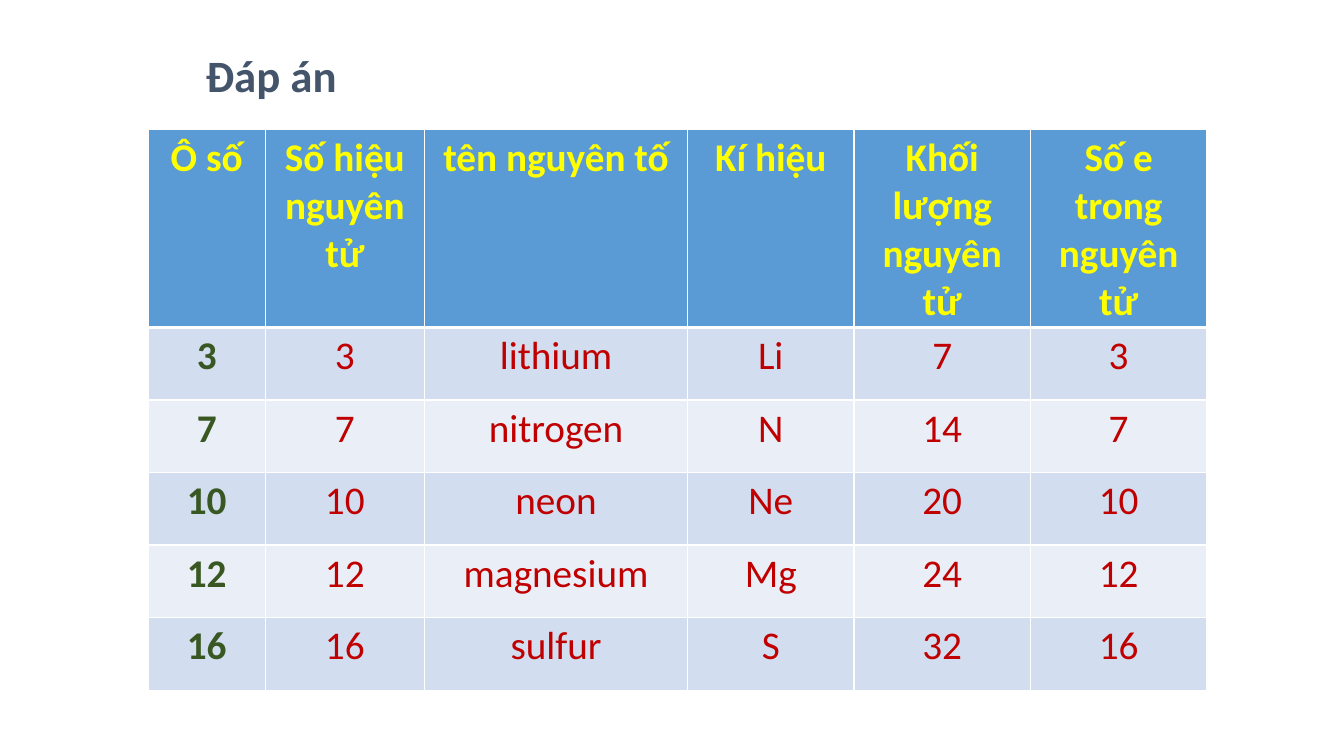
from lxml import etree
from pptx import Presentation, util as u
from pptx.dml.color import RGBColor
from pptx.enum import text
from pptx.oxml import ns

TITLE = "Đáp án"
HEADER = ["Ô số", "Số hiệu nguyên tử", "tên nguyên tố", "Kí hiệu",
          "Khối lượng nguyên tử", "Số e trong nguyên tử"]
ELEMENTS = [
    (3, "lithium", "Li", 7),
    (7, "nitrogen", "N", 14),
    (10, "neon", "Ne", 20),
    (12, "magnesium", "Mg", 24),
    (16, "sulfur", "S", 32),
]
COLUMNS = [1.16, 1.58, 2.61, 1.65, 1.75, 1.75]
ROWS = [1.95] + [0.72] * len(ELEMENTS)
TABLE_LEFT, TABLE_TOP = 1.47, 1.28

FONT = "Calibri"
WHITE = RGBColor(255, 255, 255)
SLATE = RGBColor(0x44, 0x54, 0x6A)
YELLOW = RGBColor(255, 255, 0)
GREEN = RGBColor(0x38, 0x57, 0x23)
RED = RGBColor(0xC0, 0, 0)
HEADER_BLUE = RGBColor(0x5B, 0x9B, 0xD5)
BANDS = [RGBColor(0xD2, 0xDE, 0xEF), RGBColor(0xEA, 0xEF, 0xF7)]


def write(text_frame, words, size, color, bold):
    text_frame.text = words
    font = text_frame.paragraphs[0].runs[0].font
    font.name, font.size, font.bold = FONT, u.Pt(size), bold
    font.color.rgb = color


def add_borders(cell, top, bottom):
    properties = cell._tc.get_or_add_tcPr()
    for side, width in (("L", 1), ("R", 1), ("T", top), ("B", bottom)):
        line = etree.SubElement(properties, ns.qn(f"a:ln{side}"), w=str(u.Pt(width)))
        fill = etree.SubElement(line, ns.qn("a:solidFill"))
        etree.SubElement(fill, ns.qn("a:srgbClr"), val=str(WHITE))


def add_title(slide):
    box = slide.shapes.add_textbox(*map(u.Inches, (1.94, 0.42, 3.69, 0.64)))
    box.text_frame.word_wrap = True
    box.text_frame.auto_size = text.MSO_AUTO_SIZE.SHAPE_TO_FIT_TEXT
    write(box.text_frame, TITLE, 32, SLATE, True)


def add_element_table(slide):
    contents = [HEADER] + [(number, number, name, symbol, mass, number)
                           for number, name, symbol, mass in ELEMENTS]
    size = (TABLE_LEFT, TABLE_TOP, sum(COLUMNS), sum(ROWS))
    table = slide.shapes.add_table(len(ROWS), len(COLUMNS), *map(u.Inches, size)).table
    for column, width in zip(table.columns, COLUMNS):
        column.width = u.Inches(width)
    for row, height in zip(table.rows, ROWS):
        row.height = u.Inches(height)
    for i, values in enumerate(contents):
        for j, value in enumerate(values):
            cell = table.cell(i, j)
            color = YELLOW if i == 0 else GREEN if j == 0 else RED
            write(cell.text_frame, str(value), 28, color, i == 0 or j == 0)
            cell.text_frame.paragraphs[0].alignment = text.PP_ALIGN.CENTER
            add_borders(cell, 3 if i == 1 else 1, 3 if i == 0 else 1)
            cell.fill.solid()
            cell.fill.fore_color.rgb = BANDS[(i - 1) % 2] if i else HEADER_BLUE


def main():
    presentation = Presentation()
    presentation.slide_width = u.Inches(13.33)
    presentation.slide_height = u.Inches(7.5)
    slide = presentation.slides.add_slide(presentation.slide_layouts[6])
    add_title(slide)
    add_element_table(slide)
    presentation.save("out.pptx")


if __name__ == "__main__":
    main()
